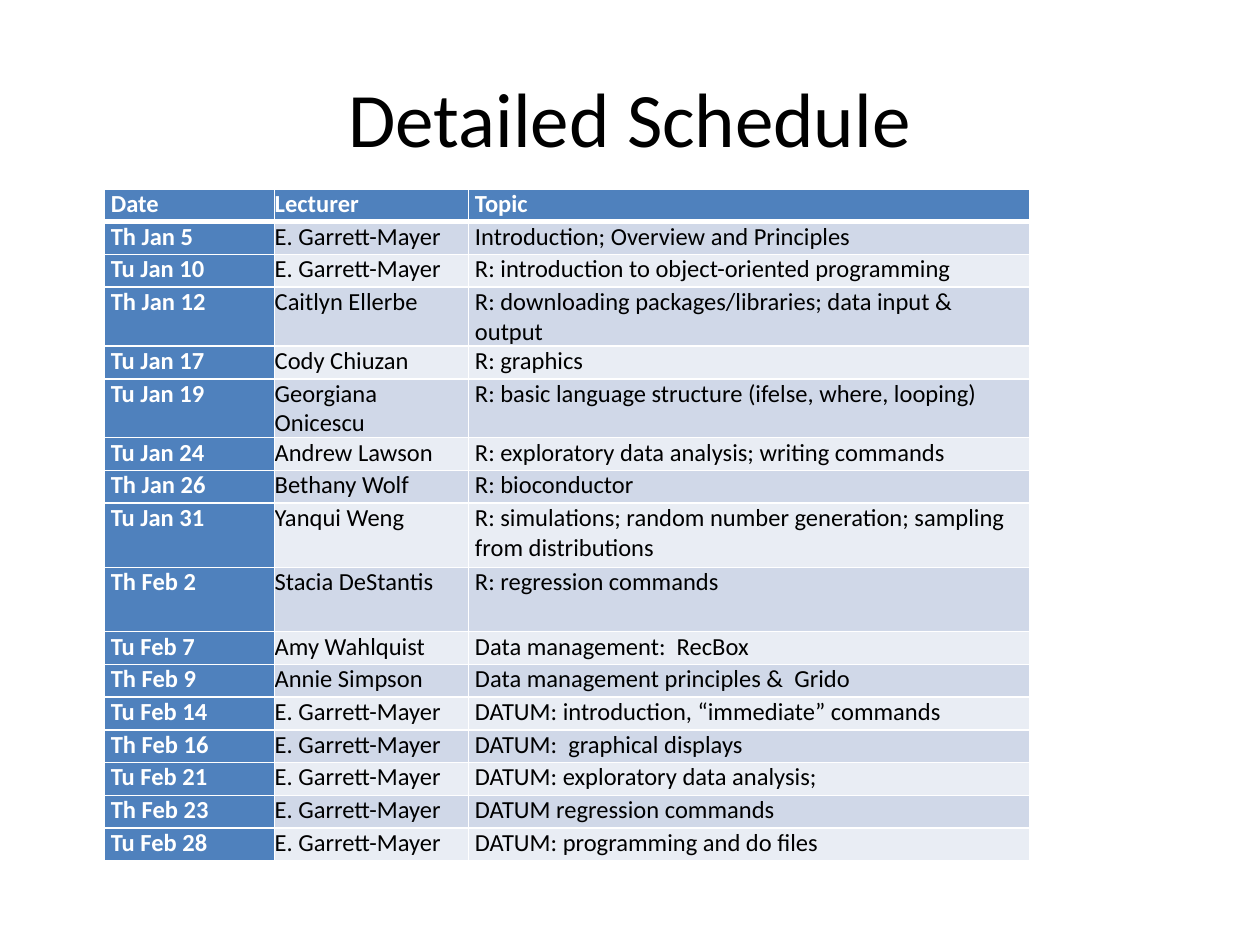
"""Build a course schedule slide with a title and a table of lectures."""
from dataclasses import dataclass

from lxml.etree import SubElement
from pptx import Presentation
from pptx.dml.color import RGBColor
from pptx.enum.text import MSO_ANCHOR, PP_ALIGN
from pptx.oxml.ns import qn
from pptx.util import Inches, Pt

TITLE = "Detailed Schedule"
HEADER = ("Date", "Lecturer", "Topic")
LECTURES = [
    ("Th Jan 5", "E. Garrett-Mayer", "Introduction; Overview and Principles"),
    ("Tu Jan 10", "E. Garrett-Mayer", "R: introduction to object-oriented programming"),
    ("Th Jan 12", "Caitlyn Ellerbe", "R: downloading packages/libraries; data input & output"),
    ("Tu Jan 17", "Cody Chiuzan", "R: graphics"),
    ("Tu Jan 19", "Georgiana Onicescu", "R: basic language structure (ifelse, where, looping)"),
    ("Tu Jan 24", "Andrew Lawson", "R: exploratory data analysis; writing commands"),
    ("Th Jan 26", "Bethany Wolf", "R: bioconductor"),
    ("Tu Jan 31", "Yanqui Weng", "R: simulations; random number generation; sampling from distributions"),
    ("Th Feb 2", "Stacia DeStantis", "R: regression commands"),
    ("Tu Feb 7", "Amy Wahlquist", "Data management:  RecBox"),
    ("Th Feb 9", "Annie Simpson", "Data management principles &  Grido"),
    ("Tu Feb 14", "E. Garrett-Mayer", "DATUM: introduction, “immediate” commands"),
    ("Th Feb 16", "E. Garrett-Mayer", "DATUM:  graphical displays"),
    ("Tu Feb 21", "E. Garrett-Mayer", "DATUM: exploratory data analysis;"),
    ("Th Feb 23", "E. Garrett-Mayer", "DATUM regression commands"),
    ("Tu Feb 28", "E. Garrett-Mayer", "DATUM: programming and do files"),
]
TALL_ROWS = ("Tu Jan 31", "Th Feb 2")
COLUMN_WIDTHS = (1.35, 1.54, 4.45)
COLUMN_INSETS = (0.05, 0, 0.05)
ROW_HEIGHT = 0.26
TALL_HEIGHT = 0.51


@dataclass(frozen=True)
class Theme:
    font: str = "Calibri"
    title_size: int = 44
    table_size: int = 14
    text: str = "000000"
    light: str = "FFFFFF"
    accent: str = "4F81BD"
    bands: tuple = ("E9EDF4", "D0D8E8")
    rule: int = 1
    header_rule: int = 3


THEME = Theme()


def style_text(frame, size, color, bold=False):
    for para in frame.paragraphs:
        for span in para.runs:
            span.font.name = THEME.font
            span.font.size = Pt(size)
            span.font.bold = bold
            span.font.color.rgb = RGBColor.from_string(color)


def add_title(page, width):
    box = page.shapes.add_textbox(Inches(0.5), Inches(0.3), width - Inches(1), Inches(1.25))
    frame = box.text_frame
    frame.word_wrap = True
    frame.vertical_anchor = MSO_ANCHOR.MIDDLE
    frame.text = TITLE
    frame.paragraphs[0].alignment = PP_ALIGN.CENTER
    style_text(frame, THEME.title_size, THEME.text)


def set_borders(cell, row):
    weights = {
        "L": THEME.rule,
        "R": THEME.rule,
        "T": THEME.header_rule if row == 1 else THEME.rule,
        "B": THEME.header_rule if row == 0 else THEME.rule,
    }
    properties = cell._tc.get_or_add_tcPr()
    for side, weight in weights.items():
        line = SubElement(properties, qn(f"a:ln{side}"), w=str(Pt(weight)))
        fill = SubElement(line, qn("a:solidFill"))
        SubElement(fill, qn("a:srgbClr"), val=THEME.light)


def fill_cell(cell, text, row, column):
    emphasized = row == 0 or column == 0
    cell.margin_left = cell.margin_right = Inches(COLUMN_INSETS[column])
    cell.margin_top = cell.margin_bottom = 0
    cell.text_frame.text = text
    style_text(cell.text_frame, THEME.table_size, THEME.light if emphasized else THEME.text, emphasized)
    set_borders(cell, row)
    cell.fill.solid()
    color = THEME.accent if emphasized else THEME.bands[row % 2]
    cell.fill.fore_color.rgb = RGBColor.from_string(color)


def add_schedule(page):
    rows = [HEADER, *LECTURES]
    heights = [TALL_HEIGHT if row[0] in TALL_ROWS else ROW_HEIGHT for row in rows]
    table = page.shapes.add_table(
        len(rows), len(HEADER), Inches(0.83), Inches(1.5),
        Inches(sum(COLUMN_WIDTHS)), Inches(sum(heights)),
    ).table
    table.first_col = True
    for column, width in zip(table.columns, COLUMN_WIDTHS):
        column.width = Inches(width)
    for row_index, (values, height) in enumerate(zip(rows, heights)):
        table.rows[row_index].height = Inches(height)
        for column_index, text in enumerate(values):
            fill_cell(table.cell(row_index, column_index), text, row_index, column_index)


def main():
    deck = Presentation()
    deck.slide_width, deck.slide_height = Inches(10), Inches(7.5)
    page = deck.slides.add_slide(deck.slide_layouts[6])
    add_title(page, deck.slide_width)
    add_schedule(page)
    deck.save("out.pptx")


if __name__ == "__main__":
    main()
